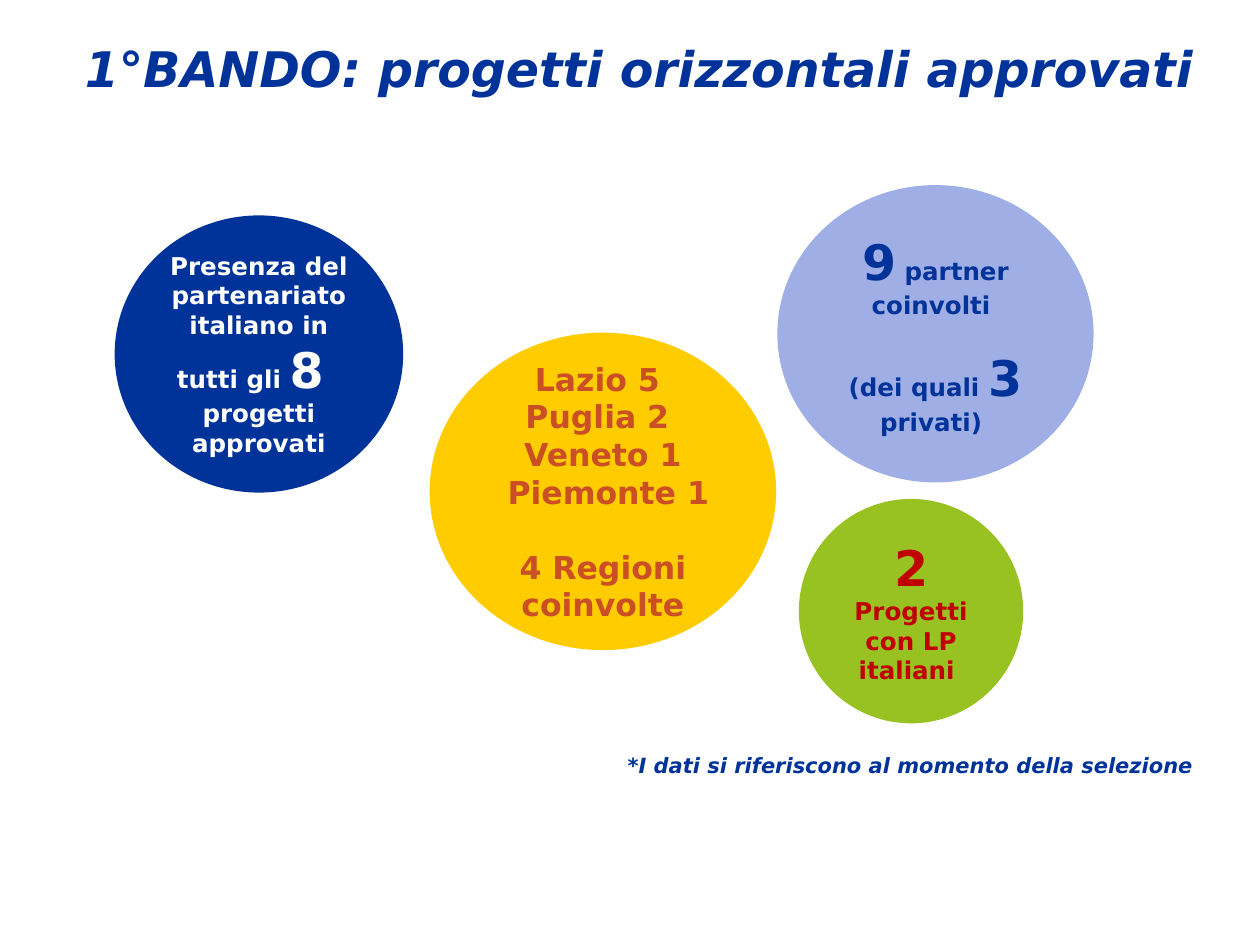
import pptx
import pptx.util
import pptx.dml.color
import pptx.enum.shapes
import pptx.enum.text

Pt = pptx.util.Pt
PP_ALIGN = pptx.enum.text.PP_ALIGN
MIDDLE = pptx.enum.text.MSO_ANCHOR.MIDDLE
COLORS = {
    "blue": "003399",
    "lavender": "9FAEE5",
    "green": "98C222",
    "yellow": "FFCC00",
    "white": "FFFFFF",
    "red": "C00000",
    "rust": "CB4F24",
}


def rgb(name):
    return pptx.dml.color.RGBColor.from_string(COLORS[name])


def add_run(p, text, size, color, italic=False):
    r = p.add_run()
    r.text = text
    r.font.name = "DejaVu Sans"
    r.font.size = Pt(size)
    r.font.bold = True
    r.font.italic = italic
    r.font.color.rgb = rgb(color)


prs = pptx.Presentation()
prs.slide_width, prs.slide_height = Pt(720), Pt(540)
s = prs.slides.add_slide(prs.slide_layouts[6])

# Title and footnote: text, box, size, alignment
texts = [
    ("1°BANDO: progetti orizzontali approvati", (41, 20, 648, 38), 28, PP_ALIGN.CENTER),
    ("*I dati si riferiscono al momento della selezione", (280.8, 426, 408.2, 22), 12,
     PP_ALIGN.RIGHT),
]
for text, box, size, align in texts:
    tf = s.shapes.add_textbox(*map(Pt, box)).text_frame
    tf.word_wrap = True
    tf.vertical_anchor = MIDDLE
    if align == PP_ALIGN.CENTER:
        tf.margin_left = tf.margin_right = 0
    p = tf.paragraphs[0]
    p.alignment = align
    add_run(p, text, size, "blue", italic=True)

# Circles: box, fill, text colour, paragraphs as (space before, runs)
circles = [
    ((65.5, 123.1, 164.9, 158.4), "blue", "white", [
        (0, [("Presenza del partenariato italiano in tutti gli ", 14), ("8 ", 28)]),
        (0, [("progetti approvati", 14)]),
    ]),
    ((456.5, 285.1, 128.2, 128.2), "green", "red", [
        (0, [("2", 28), (" Progetti con LP italiani ", 14)]),
    ]),
    ((245.5, 190.1, 198, 181.4), "yellow", "rust", [
        (0, [("Lazio 5 ", 18)]),
        (0, [("Puglia 2 ", 18)]),
        (0, [("Veneto 1", 18)]),
        (0, [(" Piemonte 1", 18)]),
        (21, [("4 Regioni coinvolte", 18)]),
    ]),
    ((444.2, 105.8, 180.7, 169.9), "lavender", "blue", [
        (0, [("9", 28), (" partner coinvolti ", 14)]),
        (16.3, [("(dei quali ", 14), ("3", 28), (" privati) ", 14)]),
    ]),
]
for box, fill, color, paragraphs in circles:
    sp = s.shapes.add_shape(pptx.enum.shapes.MSO_SHAPE.OVAL, *map(Pt, box))
    sp.shadow.inherit = False
    sp.fill.solid()
    sp.fill.fore_color.rgb = rgb(fill)
    sp.line.fill.background()
    tf = sp.text_frame
    tf.word_wrap = True
    tf.vertical_anchor = MIDDLE
    for i, (space, runs) in enumerate(paragraphs):
        p = tf.add_paragraph() if i else tf.paragraphs[0]
        p.alignment = PP_ALIGN.CENTER
        if space:
            p.space_before = Pt(space)
        for text, size in runs:
            add_run(p, text, size, color)

prs.save("out.pptx")
